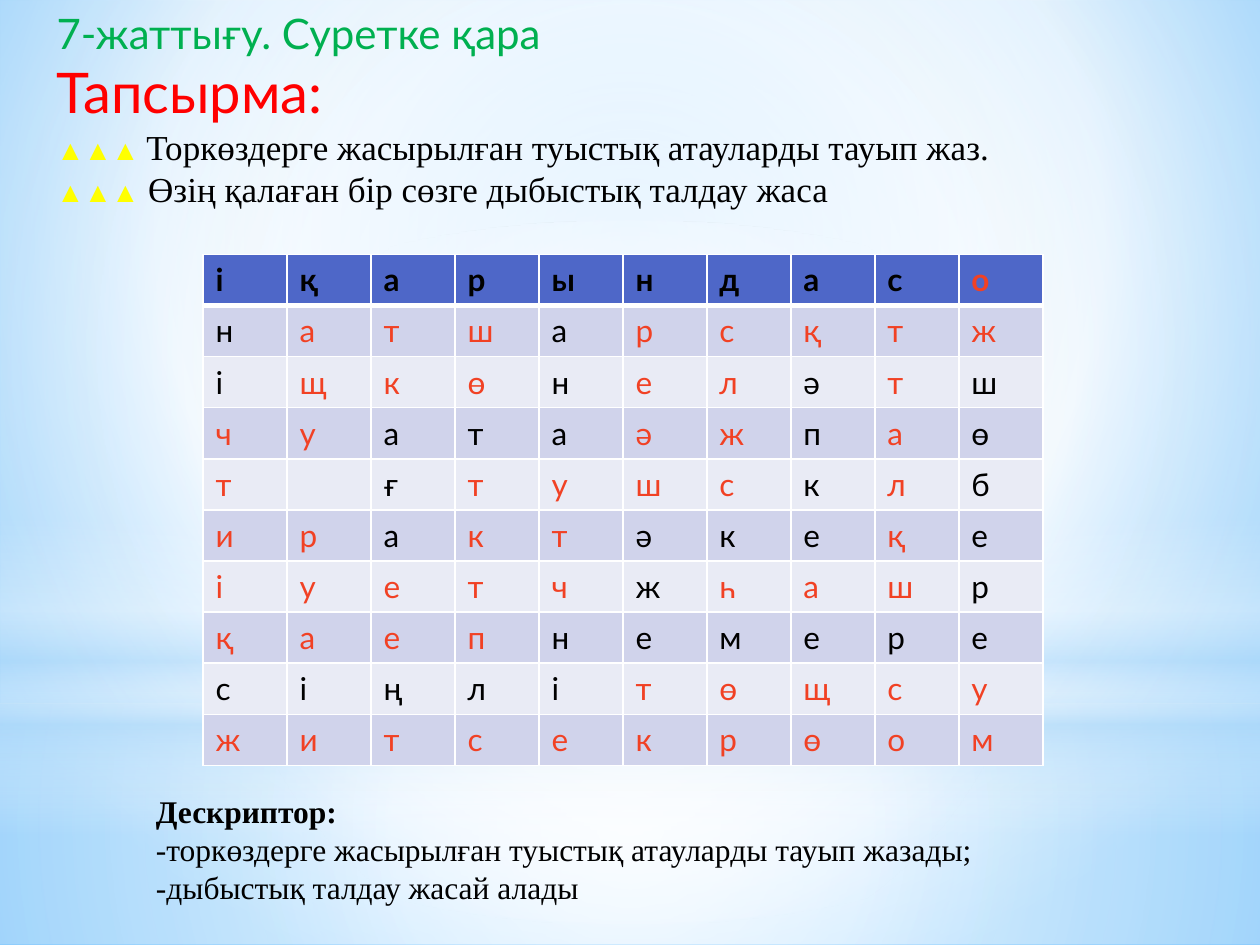
from dataclasses import dataclass

from lxml import etree
from pptx import Presentation
from pptx.dml.color import RGBColor
from pptx.enum.shapes import MSO_SHAPE
from pptx.enum.text import MSO_AUTO_SIZE
from pptx.oxml.ns import qn
from pptx.util import Pt

RECTANGLE = MSO_SHAPE.RECTANGLE
OVAL = MSO_SHAPE.OVAL
GROW = MSO_AUTO_SIZE.SHAPE_TO_FIT_TEXT
CENTER = (50, 50, 50, 50)


@dataclass(frozen=True)
class Theme:
    sans: str = "Lato"
    serif: str = "Times New Roman"
    black: str = "000000"
    white: str = "FFFFFF"
    green: str = "00B050"
    red: str = "FF0000"
    yellow: str = "FFFF00"
    filler: str = "F14124"
    header: str = "4E67C8"
    bands: tuple = ("D0D3EB", "E9EBF5")
    sky: str = "B4DCFA"
    sky_light: str = "9ED5FF"
    sky_deep: str = "5BB9FF"
    title: int = 24
    task: int = 32
    lead: int = 20
    marker: int = 16
    body: int = 18


class SlideBuilder:
    def __init__(self, page, theme):
        self.page = page
        self.theme = theme

    def style(self, span, size, color, name, bold=False):
        values = {"size": Pt(size), "name": name, "bold": bold}
        for key, value in values.items():
            setattr(span.font, key, value)
        span.font.color.rgb = RGBColor.from_string(color)

    def gradient(self, solid, stops, center=None):
        grad = etree.Element(qn("a:gradFill"), rotWithShape="1")
        stop_list = etree.SubElement(grad, qn("a:gsLst"))
        for position, color, opacity in stops:
            stop = etree.SubElement(stop_list, qn("a:gs"), pos=str(position * 1000))
            tint = etree.SubElement(stop, qn("a:srgbClr"), val=color)
            if opacity < 100:
                etree.SubElement(tint, qn("a:alpha"), val=str(opacity * 1000))
        if center:
            shade = etree.SubElement(grad, qn("a:path"), path="circle")
            sides = {side: str(value * 1000) for side, value in zip("ltrb", center)}
            etree.SubElement(shade, qn("a:fillToRect"), **sides)
        else:
            etree.SubElement(grad, qn("a:lin"), ang="5400000", scaled="0")
        solid.getparent().replace(solid, grad)

    def background(self, stops, center):
        self.page.background.fill.solid()
        solid = next(self.page.element.iter(qn("a:solidFill")))
        self.gradient(solid, stops, center)

    def glow(self, kind, top, height, stops, center=None):
        shape = self.page.shapes.add_shape(kind, Pt(0), Pt(top), Pt(720), Pt(height))
        shape.shadow.inherit = False
        shape.line.fill.background()
        shape.fill.solid()
        solid = shape.element.spPr.find(qn("a:solidFill"))
        self.gradient(solid, stops, center)

    def text(self, left, top, width, height, paragraphs):
        box = self.page.shapes.add_textbox(Pt(left), Pt(top), Pt(width), Pt(height))
        frame = box.text_frame
        for key, value in {"word_wrap": True, "auto_size": GROW}.items():
            setattr(frame, key, value)
        for index, lines in enumerate(paragraphs):
            para = frame.add_paragraph() if index else frame.paragraphs[0]
            for number, line in enumerate(lines):
                if number:
                    para.add_line_break()
                for words, *look in line:
                    span = para.add_run()
                    span.text = words
                    self.style(span, *look)

    def borders(self, cell, widths):
        properties = cell._tc.get_or_add_tcPr()
        for index, (side, width) in enumerate(widths.items()):
            line = etree.Element(qn(f"a:ln{side}"), w=str(Pt(width)))
            fill = etree.SubElement(line, qn("a:solidFill"))
            etree.SubElement(fill, qn("a:srgbClr"), val=self.theme.white)
            properties.insert(index, line)

    def letter_table(self, left, top, column_width, row_height, rows):
        theme = self.theme
        count = len(rows[0][0])
        table = self.page.shapes.add_table(
            len(rows), count, Pt(left), Pt(top),
            Pt(column_width * count), Pt(row_height * len(rows))).table
        for column in table.columns:
            column.width = Pt(column_width)
        for row_index, (letters, marks) in enumerate(rows):
            table.rows[row_index].height = Pt(row_height)
            is_header = row_index == 0
            color = theme.header if is_header else theme.bands[(row_index - 1) % 2]
            widths = {"L": 1, "R": 1, "T": 1, "B": 3 if is_header else 1}
            if row_index == 1:
                del widths["T"]
            for column_index, (letter, mark) in enumerate(zip(letters, marks)):
                cell = table.cell(row_index, column_index)
                cell.fill.solid()
                cell.fill.fore_color.rgb = RGBColor.from_string(color)
                self.borders(cell, widths)
                if letter.strip():
                    span = cell.text_frame.paragraphs[0].add_run()
                    span.text = letter
                    ink = theme.black if mark == "x" else theme.filler
                    self.style(span, theme.body, ink, theme.sans, is_header)


LETTERS = [
    ("іқарындасо", "xxxxxxxxx."),
    ("натшарсқтж", "x...x....."),
    ("іщкөнеләтш", "x...x..x.x"),
    ("чуатаәжпаө", "..xxx..x.x"),
    ("т ғтушсклб", "..x....x.x"),
    ("ирактәкеқе", "..x..xxx.x"),
    ("іуетчжһашр", ".....x...x"),
    ("қаепнемере", "....xxxxxx"),
    ("сіңлітөщсу", "xxxxx....."),
    ("житсекрөом", ".........."),
]


def main():
    theme = Theme()
    deck = Presentation()
    deck.slide_width, deck.slide_height = Pt(720), Pt(540)
    page = deck.slides.add_slide(deck.slide_layouts[6])
    builder = SlideBuilder(page, theme)
    white, sky = theme.white, theme.sky

    builder.background([(0, theme.sky_light, 100), (60, white, 100),
                        (100, theme.sky_deep, 100)], (20, 10, 20, 60))
    builder.glow(RECTANGLE, 402, 138,
                 [(0, white, 91), (37, white, 76), (100, sky, 79)], CENTER)
    builder.glow(RECTANGLE, 0, 402,
                 [(0, white, 89), (48, white, 62), (100, sky, 79)], CENTER)
    builder.glow(RECTANGLE, 296.6, 180,
                 [(0, white, 0), (29, white, 30), (45, sky, 40),
                  (55, white, 26), (65, sky, 60), (100, white, 0)])
    builder.glow(OVAL, 126, 402, [(0, white, 100), (56, white, 0)], CENTER)

    builder.letter_table(116, 145.4, 48, 29.2, LETTERS)

    marker = ("▲▲▲", theme.marker, theme.yellow, theme.serif)
    lead = (theme.lead, theme.black, theme.serif)
    builder.text(25.2, 0.7, 669, 124, [[
        [("7-жаттығу. Суретке қара", theme.title, theme.green, theme.sans)],
        [("Тапсырма:", theme.task, theme.red, theme.sans)],
        [("▲▲▲ ", *marker[1:]),
         ("Торкөздерге жасырылған туыстық атауларды тауып жаз.", *lead)],
        [marker, (" Өзің қалаған бір сөзге дыбыстық талдау жаса", *lead)],
    ]])

    body = (theme.body, theme.black, theme.serif)
    builder.text(82, 449.3, 505, 72.7, [
        [[("Дескриптор:", *body, True)]],
        [[("-торкөздерге жасырылған туыстық атауларды тауып жазады;", *body)]],
        [[("-дыбыстық талдау жасай алады", *body)]],
    ])
    deck.save("out.pptx")


if __name__ == "__main__":
    main()
